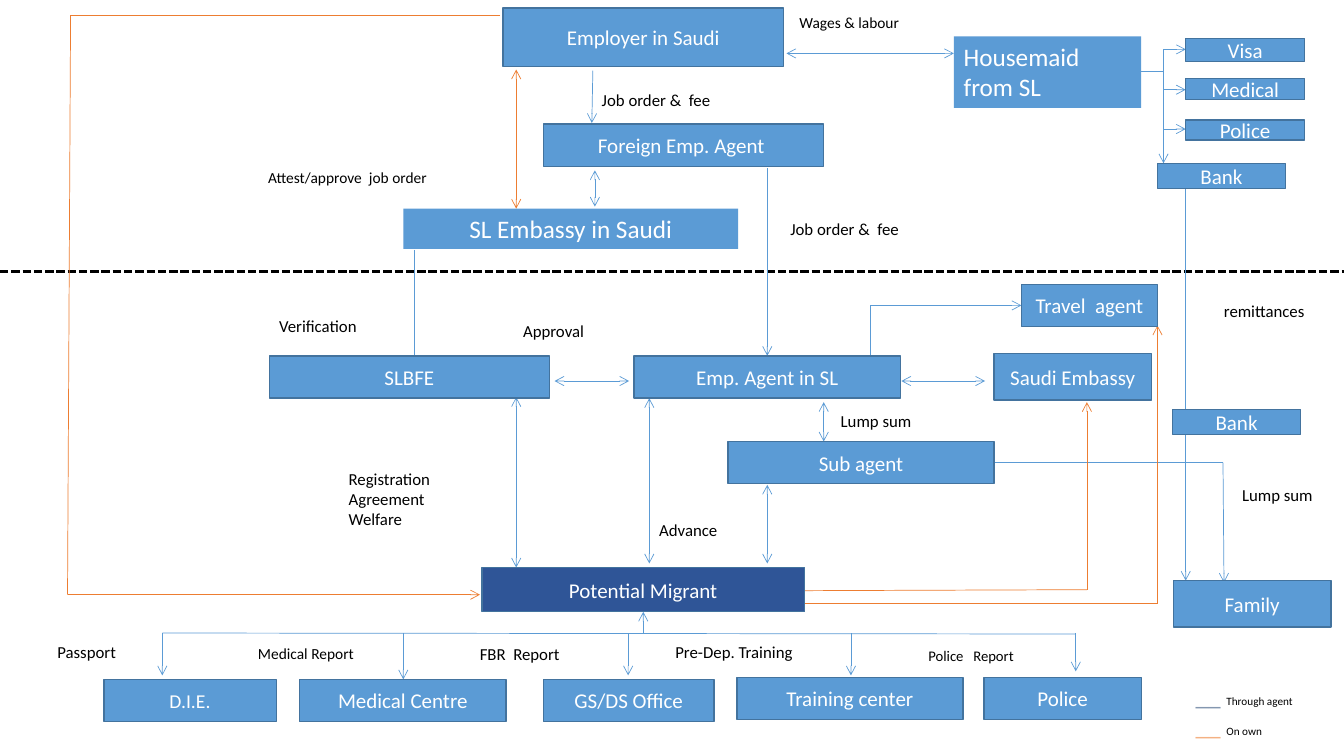
import lxml.etree
import pptx
import pptx.util
import pptx.dml.color
import pptx.enum.dml
import pptx.enum.shapes
import pptx.enum.text
import pptx.oxml.ns

Inches, Pt, qn = pptx.util.Inches, pptx.util.Pt, pptx.oxml.ns.qn
FONT = "Calibri"
COLORS = {
    "agent": "5B9BD5", "own": "ED7D31", "edge": "43739E", "migrant": "2F5597",
    "white": "FFFFFF", "black": "000000", "key agent": "8497B0", "key own": "F4B183",
}

# Outlined boxes: text, left, top, width, height
BOXES = [
    ("Employer in Saudi", 4.99, 0.08, 2.78, 0.58),
    ("Foreign Emp. Agent ", 5.39, 1.23, 2.78, 0.42),
    ("SLBFE", 2.67, 3.53, 2.78, 0.42),
    ("Emp. Agent in SL", 6.29, 3.53, 2.64, 0.42),
    ("Sub agent", 7.22, 4.38, 2.64, 0.42),
    ("Saudi Embassy", 9.86, 3.51, 1.56, 0.46),
    ("Travel  agent", 10.13, 2.82, 1.35, 0.42),
    ("Potential Migrant", 4.78, 5.63, 3.2, 0.44),
    ("Family", 11.64, 5.76, 1.56, 0.46),
    ("Visa", 11.76, 0.38, 1.18, 0.23),
    ("Medical", 11.76, 0.78, 1.18, 0.21),
    ("Police", 11.76, 1.19, 1.18, 0.2),
    ("Bank", 11.48, 1.62, 1.27, 0.25),
    ("Bank", 11.63, 4.06, 1.27, 0.25),
    ("D.I.E.", 1.03, 6.74, 1.71, 0.42),
    ("Medical Centre", 2.97, 6.74, 2.05, 0.42),
    ("GS/DS Office", 5.39, 6.74, 1.69, 0.42),
    ("Training center", 7.31, 6.72, 2.24, 0.42),
    ("Police", 9.76, 6.72, 1.56, 0.42),
]
BOX_FILLS = {"Potential Migrant": "migrant"}
BOX_SIZES = {"D.I.E.": 14}

# Larger boxes without outline: text, left, top, width, height, centred
PLAIN_BOXES = [
    ("SL Embassy in Saudi", 4, 2.07, 3.32, 0.4, True),
    ("Housemaid from SL", 9.46, 0.36, 1.86, 0.71, False),
]

# Labels: text, left, top, width, height, size
LABELS = [
    ("Wages & labour", 7.83, 0.08, 1.91, 0.39, 11),
    ("Job order &  fee", 5.87, 0.84, 1.74, 0.3, 12),
    ("Attest/approve  job order", 2.56, 1.62, 2.48, 0.39, 11),
    ("Job order &  fee", 7.74, 2.12, 1.74, 0.3, 12),
    ("Verification", 2.67, 3.08, 1.39, 0.3, 12),
    ("Approval", 5.09, 3.13, 1.17, 0.3, 12),
    ("remittances", 12.04, 2.93, 1.52, 0.3, 12),
    ("Lump sum", 8.24, 4.03, 1.74, 0.3, 12),
    ("Lump sum", 12.22, 4.76, 1.55, 0.3, 12),
    ("Registration\nAgreement\nWelfare", 3.36, 4.6, 1.52, 0.71, 12),
    ("Advance", 6.44, 5.11, 1.17, 0.3, 12),
    ("Passport", 0.47, 6.32, 1.12, 0.3, 12),
    ("Medical Report", 2.46, 6.34, 1.65, 0.29, 11),
    ("FBR  Report", 4.66, 6.34, 1.45, 0.3, 12),
    ("Pre-Dep. Training", 6.6, 6.32, 1.8, 0.4, 12),
    ("Police   Report", 9.11, 6.37, 1.43, 0.28, 10.5),
]
LEGEND = [("Through agent", "key agent"), ("On own", "key own")]

# Routes: colour, arrowheads (none, end or both), points
ROUTES = [
    ("agent", "end", [(5.88, 0.7), (5.87, 1.22)]),
    ("own", "both", [(5.12, 2.07), (5.12, 0.69)]),
    ("agent", "both", [(5.9, 2.05), (5.9, 1.69)]),
    ("agent", "both", [(7.8, 0.53), (9.46, 0.53)]),
    ("agent", "end", [(7.61, 1.67), (7.61, 3.53)]),
    ("agent", "none", [(4.11, 2.48), (4.11, 3.53)]),
    ("agent", "both", [(5.5, 3.78), (6.24, 3.78)]),
    ("agent", "both", [(8.94, 3.78), (9.77, 3.78)]),
    ("agent", "both", [(8.17, 4.38), (8.17, 3.99)]),
    ("agent", "both", [(5.12, 5.63), (5.12, 3.94)]),
    ("agent", "both", [(6.44, 5.59), (6.44, 3.95)]),
    ("agent", "both", [(7.61, 5.59), (7.61, 4.81)]),
    ("agent", "end", [(8.63, 3.53), (8.63, 3.03), (10.13, 3.03)]),
    ("agent", "end", [(9.82, 4.59), (12.13, 4.59), (12.14, 5.78)]),
    ("agent", "end", [(11.76, 1.87), (11.76, 5.76)]),
    ("own", "end", [(4.96, 0.15), (0.7, 0.15), (0.67, 5.9), (4.76, 5.9)]),
    ("own", "end", [(7.98, 5.86), (10.78, 5.85), (10.78, 3.99)]),
    ("own", "end", [(7.98, 5.99), (11.48, 5.99), (11.48, 3.23)]),
    # Housemaid branch
    ("agent", "none", [(11.31, 0.71), (11.54, 0.71)]),
    ("agent", "end", [(11.54, 0.49), (11.54, 1.62)]),
    # Migrant branch
    ("agent", "end", [(6.38, 6.28), (6.38, 6.07)]),
    ("agent", "none", [(1.61, 6.28), (10.67, 6.29)]),
]
CHECK_ROWS = [0.49, 0.89, 1.28]
OFFICE_DROPS = [(1.61, 6.7), (4, 6.74), (6.23, 6.7), (8.44, 6.7), (10.67, 6.66)]
ROUTES += [("agent", "end", [(11.54, y), (11.76, y)]) for y in CHECK_ROWS]
ROUTES += [("agent", "end", [(x, 6.28), (x, y)]) for x, y in OFFICE_DROPS]
HEADS = {"none": [], "end": ["a:tailEnd"], "both": ["a:headEnd", "a:tailEnd"]}


def rgb(name):
    return pptx.dml.color.RGBColor.from_string(COLORS[name])


def style(r, size, color):
    r.font.name, r.font.size = FONT, Pt(size)
    r.font.color.rgb = rgb(color)


def add_line(s, start, end, color, width, heads="none"):
    c = s.shapes.add_connector(pptx.enum.shapes.MSO_CONNECTOR.STRAIGHT,
                               *[Inches(v) for v in (*start, *end)])
    c.line.color.rgb, c.line.width = rgb(color), Pt(width)
    sp_pr = c._element.spPr
    for tag in HEADS[heads]:
        lxml.etree.SubElement(sp_pr.find(qn("a:ln")), qn(tag), type="arrow")
    lxml.etree.SubElement(sp_pr, qn("a:effectLst"))
    return c


def add_box(s, text, place, size, fill, edge=None, centred=True):
    sp = s.shapes.add_shape(pptx.enum.shapes.MSO_SHAPE.RECTANGLE, *[Inches(v) for v in place])
    sp.shadow.inherit = False
    sp.fill.solid()
    sp.fill.fore_color.rgb = rgb(fill)
    if edge:
        sp.line.color.rgb, sp.line.width = rgb(edge), Pt(1)
    else:
        sp.line.fill.background()
    tf = sp.text_frame
    tf.text, tf.word_wrap = text, True
    anchors, aligns = pptx.enum.text.MSO_ANCHOR, pptx.enum.text.PP_ALIGN
    tf.vertical_anchor = anchors.MIDDLE if edge else anchors.TOP
    p = tf.paragraphs[0]
    p.alignment = aligns.CENTER if centred else aligns.LEFT
    style(p.runs[0], size, "white")


def add_text(s, place):
    tf = s.shapes.add_textbox(*[Inches(v) for v in place]).text_frame
    tf.word_wrap = True
    return tf


def main():
    prs = pptx.Presentation()
    prs.slide_width, prs.slide_height = Inches(13.33), Inches(7.5)
    s = prs.slides.add_slide(prs.slide_layouts[6])

    # Border between the two countries
    border = add_line(s, (0, 2.69), (13.33, 2.69), "black", 2)
    border.line.dash_style = pptx.enum.dml.MSO_LINE.SQUARE_DOT

    # Routes: the end arrowhead goes on the last leg
    for color, heads, points in ROUTES:
        legs = list(zip(points, points[1:]))
        for i, (start, end) in enumerate(legs):
            add_line(s, start, end, color, 0.5, heads if i == len(legs) - 1 else "none")

    # Boxes
    for text, *place in BOXES:
        add_box(s, text, place, BOX_SIZES.get(text, 15), BOX_FILLS.get(text, "agent"), "edge")
    for text, *place, centred in PLAIN_BOXES:
        add_box(s, text, place, 18, "agent", centred=centred)

    # Labels
    for text, *place, size in LABELS:
        tf = add_text(s, place)
        tf.text = text
        for p in tf.paragraphs:
            style(p.runs[0], size, "black")

    # Legend
    tf = add_text(s, (11.76, 6.7, 1.57, 0.71))
    for i, (text, color) in enumerate(LEGEND):
        p = tf.add_paragraph() if i else tf.paragraphs[0]
        for part, size, ink in (("__ ", 18, color), (text, 8, "black")):
            r = p.add_run()
            r.text = part
            style(r, size, ink)

    prs.save("out.pptx")


if __name__ == "__main__":
    main()
